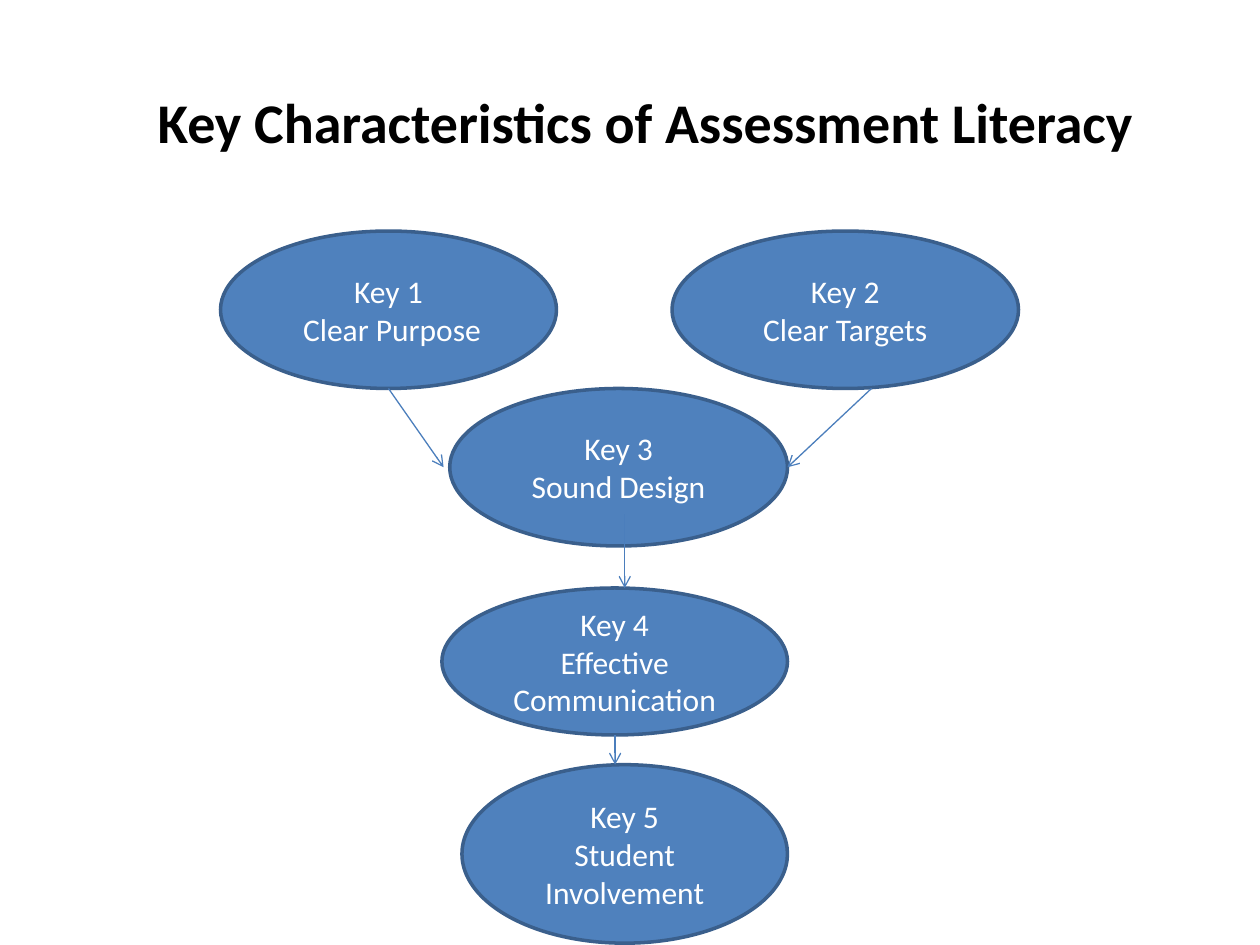
"""Build a slide showing the five keys of assessment literacy as linked ellipses."""
from lxml import etree
from pptx import Presentation
from pptx import util as u
from pptx.dml.color import RGBColor
from pptx.enum import shapes, text
from pptx.oxml.ns import qn


def color(value):
    return RGBColor.from_string(value)


def write(box, lines, size, shade, bold=False):
    frame = box.text_frame
    frame.word_wrap = True
    frame.vertical_anchor = text.MSO_ANCHOR.MIDDLE
    for index, line in enumerate(lines):
        para = frame.add_paragraph() if index else frame.paragraphs[0]
        para.alignment = text.PP_ALIGN.CENTER
        span = para.add_run()
        span.text = line
        span.font.name = "Calibri"
        span.font.size = u.Pt(size)
        span.font.bold = bold
        span.font.color.rgb = color(shade)


deck = Presentation()
deck.slide_width, deck.slide_height = u.Pt(720), u.Pt(540)
page = deck.slides.add_slide(deck.slide_layouts[6])

title = page.shapes.add_textbox(u.Pt(18), u.Pt(12), u.Pt(702), u.Pt(114))
write(title, ["Key Characteristics of Assessment Literacy"], 32, "000000", bold=True)

keys = [
    (" Clear Purpose", 126, 132, 192, 90),
    ("Clear Targets", 384, 132, 198, 90),
    ("Sound Design", 257, 222, 193, 90),
    ("Effective Communication", 252.5, 336, 197.5, 84),
    ("Student Involvement", 264, 437, 186, 102),
]
for number, (name, *bounds) in enumerate(keys, start=1):
    ellipse = page.shapes.add_shape(shapes.MSO_SHAPE.OVAL, *map(u.Pt, bounds))
    ellipse.shadow.inherit = False
    ellipse.fill.solid()
    ellipse.fill.fore_color.rgb = color("4F81BD")
    ellipse.line.color.rgb = color("3A5F8C")
    ellipse.line.width = u.Pt(2)
    write(ellipse, [f"Key {number}", name], 18, "FFFFFF")

arrows = [
    (222, 222, 253.5, 267),
    (498, 222, 450, 267),
    (357, 294, 357, 336),
    (351.5, 420, 351.5, 437),
]
for ends in arrows:
    arrow = page.shapes.add_connector(shapes.MSO_CONNECTOR.STRAIGHT, *map(u.Pt, ends))
    arrow.line.color.rgb = color("4B7EBC")
    arrow.line.width = u.Pt(0.75)
    etree.SubElement(arrow.line._get_or_add_ln(), qn("a:tailEnd"), type="arrow")
    etree.SubElement(arrow._element.spPr, qn("a:effectLst"))

deck.save("out.pptx")
